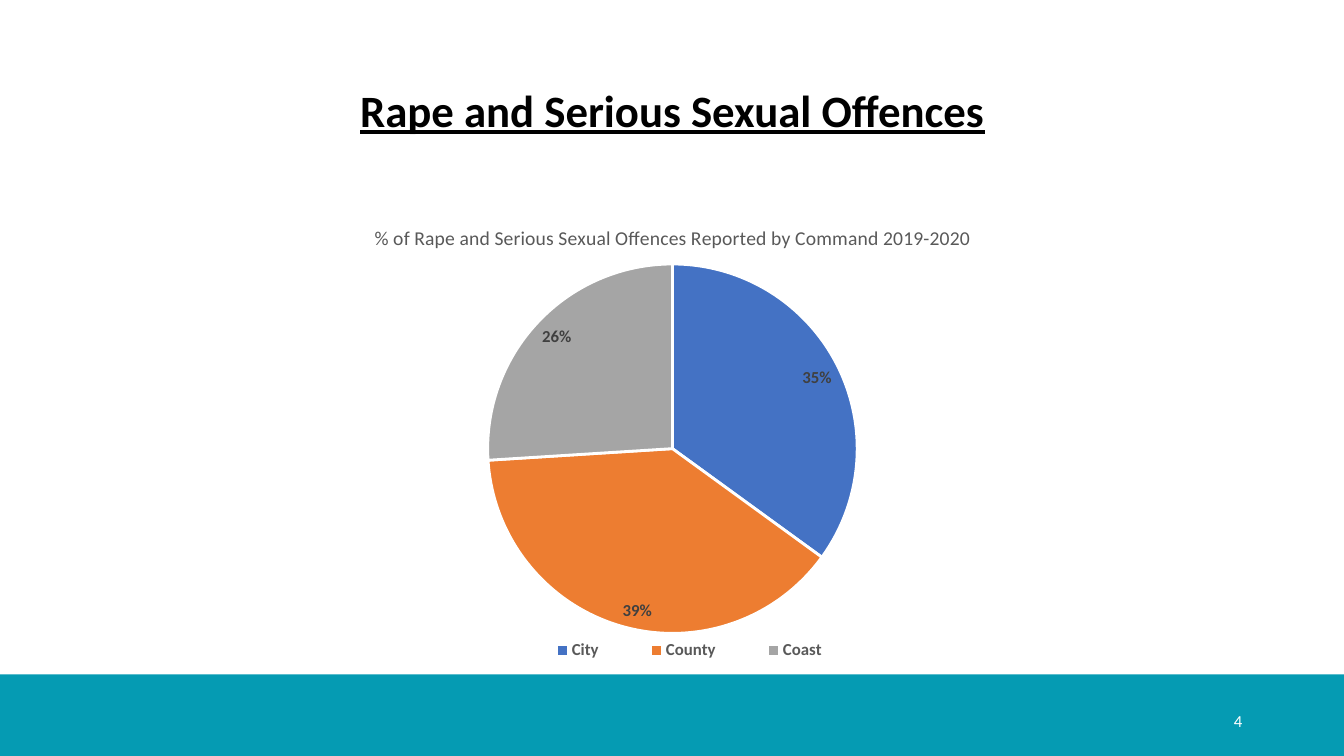
from lxml import etree
from pptx import Presentation
from pptx.chart.data import CategoryChartData
from pptx.dml.color import RGBColor
from pptx.enum.chart import XL_CHART_TYPE, XL_LABEL_POSITION, XL_LEGEND_POSITION
from pptx.enum.shapes import MSO_SHAPE
from pptx.enum.text import MSO_ANCHOR, PP_ALIGN
from pptx.oxml import parse_xml
from pptx.oxml.ns import nsdecls
from pptx.util import Inches, Pt

WIDTH, HEIGHT = Inches(13.33), Inches(7.5)
FONT = "Calibri"
TEAL, WHITE, BLACK = "059BB3", "FFFFFF", "000000"
COMMANDS = {"City": (35, "4472C4"), "County": (39, "ED7D31"), "Coast": (26, "A5A5A5")}


def color(value):
    return RGBColor.from_string(value)


def area(left, top, width, height):
    """Turn percentages of the slide into lengths."""
    return (int(WIDTH * left / 100), int(HEIGHT * top / 100),
            int(WIDTH * width / 100), int(HEIGHT * height / 100))


def set_font(font, size, tint, **formats):
    values = {"name": FONT, "size": Pt(size), "bold": False, **formats}
    for name, value in values.items():
        setattr(font, name, value)
    font.color.rgb = color(tint)


def add_band(page, place, tint):
    band = page.shapes.add_shape(MSO_SHAPE.RECTANGLE, *area(*place))
    band.shadow.inherit = False
    band.fill.solid()
    band.fill.fore_color.rgb = color(tint)
    band.line.fill.background()


def add_text(page, place, text, size, tint, align, spacing=1.0, **formats):
    box = page.shapes.add_textbox(*area(*place))
    frame = box.text_frame
    frame.word_wrap = True
    frame.vertical_anchor = MSO_ANCHOR.MIDDLE
    para = frame.paragraphs[0]
    para.alignment = align
    para.line_spacing = spacing
    span = para.add_run()
    span.text = text
    set_font(span.font, size, tint, **formats)


def set_layout(element, after, **shares):
    """Place a chart part by shares of the chart's size."""
    for old in element.findall("c:layout", element.nsmap):
        element.remove(old)
    layout = parse_xml(f"<c:layout {nsdecls('c')}><c:manualLayout/></c:layout>")
    tag = "{%s}" % element.nsmap["c"]
    if after is None:
        element.insert(0, layout)
    else:
        element.find(tag + after).addnext(layout)
    if "w" in shares and after is None:
        etree.SubElement(layout[0], tag + "layoutTarget", val="inner")
    for mode in ("xMode", "yMode"):
        etree.SubElement(layout[0], tag + mode, val="edge")
    for name, share in shares.items():
        etree.SubElement(layout[0], tag + name, val=str(share))


def add_pie(page, place, title):
    data = CategoryChartData()
    data.categories = list(COMMANDS)
    data.add_series("Series 1", [share for share, _ in COMMANDS.values()])
    chart = page.shapes.add_chart(XL_CHART_TYPE.PIE, *area(*place), data).chart
    set_font(chart.font, 10, BLACK)

    # Title
    chart.has_title = True
    heading = chart.chart_title
    heading.text_frame.text = title
    set_font(heading.text_frame.paragraphs[0].runs[0].font, 14, "595959")
    heading.include_in_layout = False
    set_layout(heading._element, "tx", x=0.24, y=0.04)

    # Slices
    plot = chart.plots[0]
    plot.vary_by_categories = True
    for index, (_, tint) in enumerate(COMMANDS.values()):
        slice_format = plot.series[0].points[index].format
        slice_format.fill.solid()
        slice_format.fill.fore_color.rgb = color(tint)
        slice_format.line.color.rgb = color(WHITE)
        slice_format.line.width = Pt(2)
    set_layout(chart._chartSpace.chart.plotArea, None, x=0.34, y=0.13, w=0.32, h=0.77)

    # Percent labels
    labels = plot.series[0].data_labels
    options = {"show_percentage": True, "show_value": False, "number_format": "0%",
               "number_format_is_linked": False, "position": XL_LABEL_POSITION.INSIDE_END}
    for name, value in options.items():
        setattr(labels, name, value)
    set_font(labels.font, 12, "404040", bold=True)

    # Legend
    chart.has_legend = True
    legend = chart.legend
    legend.position = XL_LEGEND_POSITION.BOTTOM
    legend.include_in_layout = False
    set_font(legend.font, 12, "595959", bold=True)
    set_layout(legend._element, "legendPos", x=0.36, y=0.9, w=0.31, h=0.07)


def main():
    deck = Presentation()
    deck.slide_width, deck.slide_height = WIDTH, HEIGHT
    page = deck.slides.add_slide(deck.slide_layouts[6])

    add_band(page, (-0.9, 89.2, 103.9, 14.27), TEAL)
    add_text(page, (6.9, 5.33, 86.27, 19.33), "Rape and Serious Sexual Offences",
             32, BLACK, PP_ALIGN.CENTER, 0.9, bold=True, underline=True)
    add_text(page, (70.67, 92.67, 22.5, 5.33), "4", 12, WHITE, PP_ALIGN.RIGHT)
    add_pie(page, (6.9, 26.67, 86.27, 63.47),
            "% of Rape and Serious Sexual Offences Reported by Command 2019-2020")

    deck.save("out.pptx")


if __name__ == "__main__":
    main()
